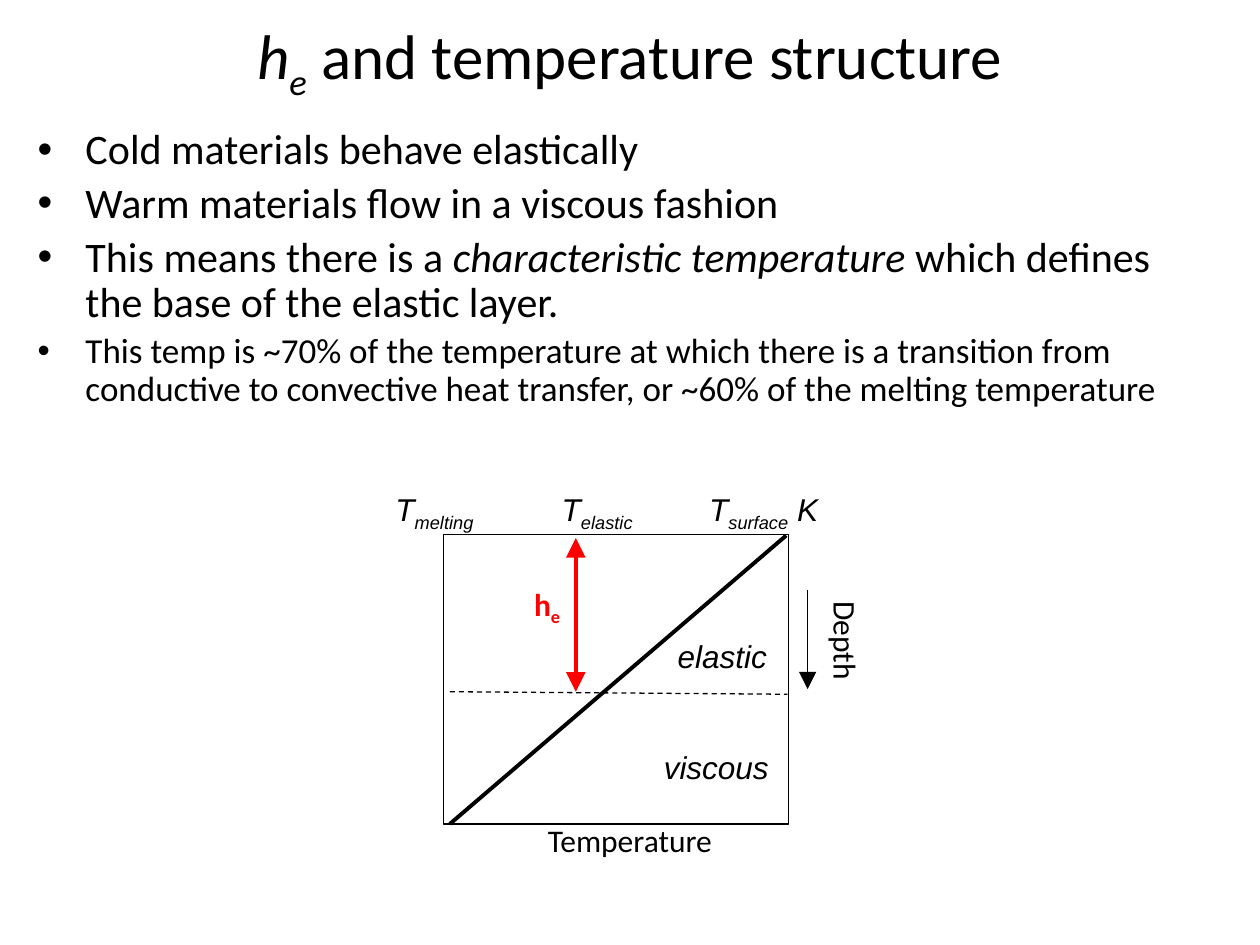
from dataclasses import dataclass
from typing import NamedTuple

from pptx import Presentation
from pptx.dml.color import RGBColor
from pptx.enum.dml import MSO_LINE_DASH_STYLE as Dash
from pptx.enum.shapes import MSO_CONNECTOR as Connector, MSO_SHAPE as Shape
from pptx.enum.text import MSO_ANCHOR as Anchor, MSO_AUTO_SIZE as AutoSize, PP_ALIGN as Align
from pptx.oxml.ns import qn
from pptx.util import Inches, Length, Pt
from lxml.etree import SubElement


@dataclass(frozen=True)
class Theme:
    ink: RGBColor = RGBColor(0, 0, 0)
    accent: RGBColor = RGBColor(255, 0, 0)
    sans: str = "Calibri"
    symbol: str = "Arial"
    title: int = 36
    body: int = 24
    detail: int = 20
    label: int = 18
    thin: float = 0.75
    thick: float = 2.25


class Piece(NamedTuple):
    text: str
    italic: bool = False
    sub: bool = False


class Box(NamedTuple):
    col: float
    row: float
    cols: float
    rows: float


@dataclass(frozen=True)
class Bullet:
    pieces: tuple[Piece, ...]
    size: int


@dataclass(frozen=True)
class Label:
    box: Box
    pieces: tuple[Piece, ...]
    font: str
    color: RGBColor
    bold: bool = False
    turn: int = 0


@dataclass(frozen=True)
class Stroke:
    start: tuple[float, float]
    end: tuple[float, float]
    color: RGBColor
    width: float
    dashed: bool = False
    heads: tuple[str, ...] = ()


THEME = Theme()
COLUMNS, ROWS = 100, 75
WIDTH, HEIGHT = Inches(10), Inches(7.5)


def x(cols: float) -> Length:
    return Length(round(WIDTH * cols / COLUMNS))


def y(rows: float) -> Length:
    return Length(round(HEIGHT * rows / ROWS))


def place(box: Box) -> tuple[Length, ...]:
    return x(box.col), y(box.row), x(box.cols), y(box.rows)


def write(paragraph, pieces: tuple[Piece, ...], font: str, size: int, color: RGBColor) -> None:
    paragraph.font.name = font
    paragraph.font.size = Pt(size)
    paragraph.font.color.rgb = color
    mixed = len({piece.italic for piece in pieces}) > 1
    if not mixed:
        paragraph.font.italic = pieces[0].italic
    for piece in pieces:
        run = paragraph.add_run()
        run.text = piece.text
        if mixed:
            run.font.italic = piece.italic
        if piece.sub:
            run._r.get_or_add_rPr().set("baseline", "-25000")


def draw_title(slide, box: Box, pieces: tuple[Piece, ...]) -> None:
    frame = slide.shapes.add_textbox(*place(box)).text_frame
    frame.word_wrap = True
    frame.vertical_anchor = Anchor.MIDDLE
    frame.paragraphs[0].alignment = Align.CENTER
    write(frame.paragraphs[0], pieces, THEME.sans, THEME.title, THEME.ink)


def draw_bullets(slide, box: Box, bullets: list[Bullet]) -> None:
    frame = slide.shapes.add_textbox(*place(box)).text_frame
    frame.word_wrap = True
    for index, bullet in enumerate(bullets):
        paragraph = frame.add_paragraph() if index else frame.paragraphs[0]
        paragraph.line_spacing = 0.9
        paragraph.space_before = Pt(bullet.size * 0.2)
        properties = paragraph._p.get_or_add_pPr()
        properties.set("marL", str(Inches(0.38)))
        properties.set("indent", str(-Inches(0.38)))
        SubElement(properties, qn("a:buFont")).set("typeface", THEME.symbol)
        SubElement(properties, qn("a:buChar")).set("char", "•")
        write(paragraph, bullet.pieces, THEME.sans, bullet.size, THEME.ink)


def draw_label(slide, label: Label) -> None:
    shape = slide.shapes.add_textbox(*place(label.box))
    shape.rotation = label.turn
    shape.text_frame.word_wrap = False
    shape.text_frame.auto_size = AutoSize.SHAPE_TO_FIT_TEXT
    paragraph = shape.text_frame.paragraphs[0]
    write(paragraph, label.pieces, label.font, THEME.label, label.color)
    paragraph.font.bold = label.bold


def draw_frame(slide, box: Box) -> None:
    frame = slide.shapes.add_shape(Shape.RECTANGLE, *place(box))
    frame.shadow.inherit = False
    frame.fill.background()
    frame.line.color.rgb = THEME.ink
    frame.line.width = Pt(THEME.thin)


def draw_stroke(slide, stroke: Stroke) -> None:
    (x1, y1), (x2, y2) = stroke.start, stroke.end
    line = slide.shapes.add_connector(Connector.STRAIGHT, x(x1), y(y1), x(x2), y(y2))
    SubElement(line._element.spPr, qn("a:effectLst"))
    line.line.color.rgb = stroke.color
    line.line.width = Pt(stroke.width)
    if stroke.dashed:
        line.line.dash_style = Dash.DASH
    for head in stroke.heads:
        SubElement(line.line._get_or_add_ln(), qn(head), type="triangle", w="lg", len="lg")


def symbol(box: Box, *pieces: Piece) -> Label:
    return Label(box, pieces, THEME.symbol, THEME.ink)


def temperature(col: float, cols: float, name: str, *unit: Piece) -> Label:
    return symbol(Box(col, 38.4, cols, 4), Piece("T", True), Piece(name, True, True), *unit)


def main() -> None:
    deck = Presentation()
    deck.slide_width, deck.slide_height = WIDTH, HEIGHT
    slide = deck.slides.add_slide(deck.slide_layouts[6])

    draw_title(slide, Box(5, -1.5, 90, 12.5), (
        Piece("h", True), Piece("e", True, True), Piece(" and temperature structure")))
    draw_bullets(slide, Box(2, 9.7, 92.1, 25.8), [
        Bullet((Piece("Cold materials behave elastically"),), THEME.body),
        Bullet((Piece("Warm materials flow in a viscous fashion"),), THEME.body),
        Bullet((Piece("This means there is a "), Piece("characteristic temperature", True),
                Piece(" which defines the base of the elastic layer.")), THEME.body),
        Bullet((Piece("This temp is ~70% of the temperature at which there is a transition from "
                      "conductive to convective heat transfer, or ~60% of the melting "
                      "temperature"),), THEME.detail),
    ])

    draw_frame(slide, Box(35.2, 42.4, 27.4, 23))
    geotherm = Stroke((62.4, 42.5), (35.7, 65.4), THEME.ink, THEME.thick)
    elastic_base = Stroke((35.7, 54.9), (62.5, 55.1), THEME.ink, THEME.thin, dashed=True)
    depth_arrow = Stroke((64.1, 46.8), (64.1, 54.7), THEME.ink, THEME.thin, heads=("a:tailEnd",))
    thickness = Stroke((45.7, 42.7), (45.7, 54.9), THEME.accent, THEME.thick,
                       heads=("a:headEnd", "a:tailEnd"))
    for stroke in (geotherm, elastic_base, depth_arrow, thickness):
        draw_stroke(slide, stroke)

    labels = [
        temperature(30.4, 9.4, "melting"),
        temperature(43.6, 8.8, "elastic"),
        temperature(55.3, 12.2, "surface", Piece(" K", True)),
        symbol(Box(52.8, 50.1, 9.1, 4), Piece("elastic", True)),
        symbol(Box(51.7, 58.9, 10.4, 4), Piece("viscous", True)),
        Label(Box(62.6, 49, 8.8, 4.3), (Piece("Depth"),), THEME.sans, THEME.ink, turn=90),
        Label(Box(41.4, 45.9, 4.2, 4), (Piece("h"), Piece("e", sub=True)),
              THEME.sans, THEME.accent, bold=True),
        Label(Box(42.5, 64.7, 16.2, 4.3), (Piece("Temperature"),), THEME.sans, THEME.ink),
    ]
    for label in labels:
        draw_label(slide, label)

    deck.save("out.pptx")


if __name__ == "__main__":
    main()
